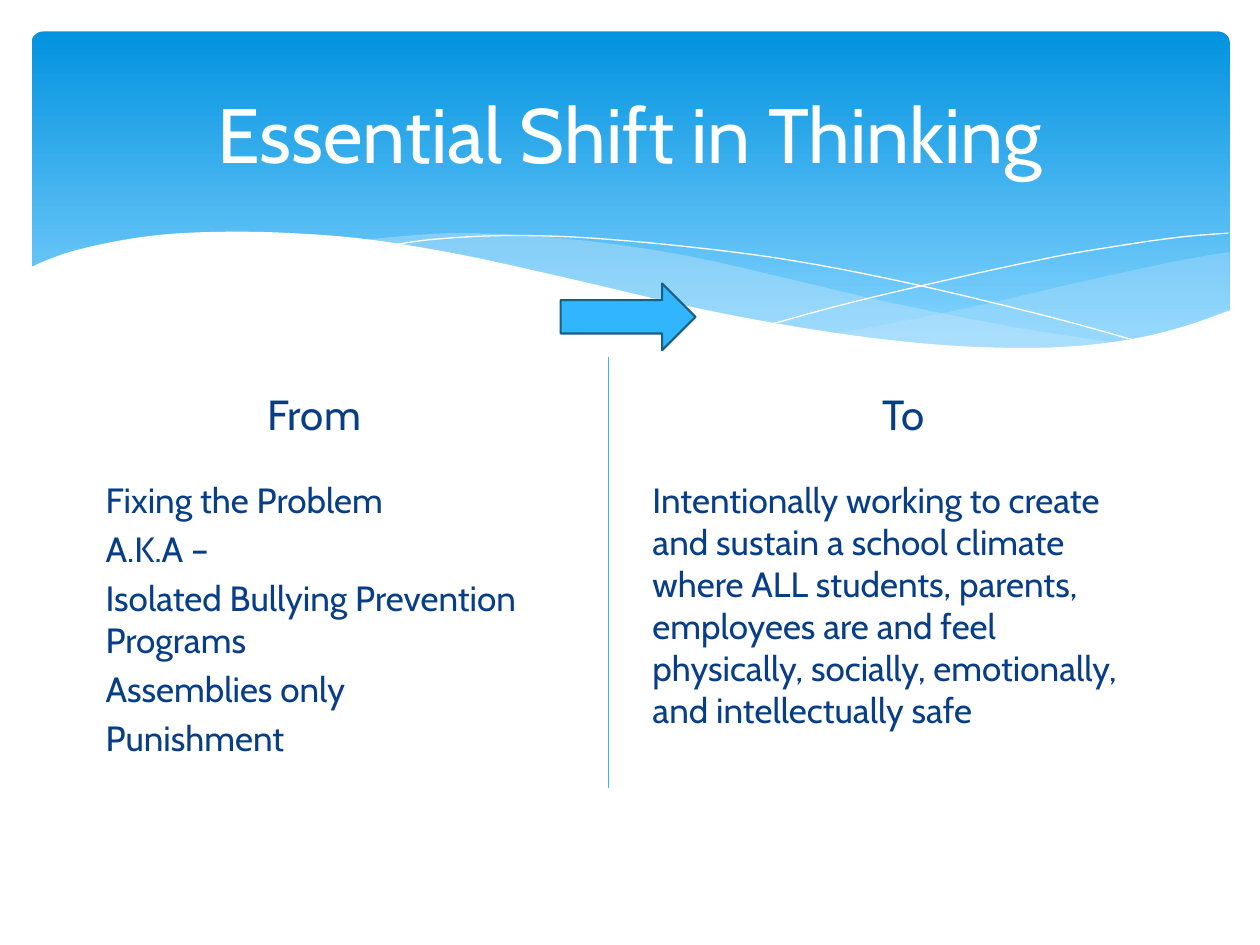
from lxml import etree
from pptx import Presentation
from pptx.dml.color import RGBColor
from pptx.enum.shapes import MSO_CONNECTOR, MSO_SHAPE
from pptx.enum.text import MSO_ANCHOR, PP_ALIGN
from pptx.oxml.ns import qn
from pptx.util import Inches, Pt

LEFT, CENTER = PP_ALIGN.LEFT, PP_ALIGN.CENTER
TOP, MIDDLE = MSO_ANCHOR.TOP, MSO_ANCHOR.MIDDLE
ROUNDED, ARROW = MSO_SHAPE.ROUNDED_RECTANGLE, MSO_SHAPE.RIGHT_ARROW
STRAIGHT = MSO_CONNECTOR.STRAIGHT

FONT = "Cabin"
COLORS = {
    "sky_top": "0293E0", "sky_bottom": "83D3FE", "wave": "C6E7FC",
    "white": "FFFFFF", "text": "073E87", "accent": "31B6FD", "outline": "195F84",
}

# Grid: two columns, a heading row and a body row (inches)
COLUMN_LEFT = (0.74, 5.08)
COLUMN_WIDTH = 4.18
HEADING_TOP, HEADING_HEIGHT = 2.93, 0.7
BODY_TOP, BODY_HEIGHT = 3.75, 2.95

# Each column: heading, heading width, body paragraphs
COLUMNS = [
    ("From", 3.51, ["Fixing the Problem", "A.K.A –",
                    "Isolated Bullying Prevention Programs",
                    "Assemblies only", "Punishment"]),
    ("To", COLUMN_WIDTH, [
        "Intentionally working to create and sustain a school climate where ALL "
        "students, parents, employees are and feel physically, socially, "
        "emotionally, and intellectually safe"]),
]

# Waves: opacity in percent and the smooth edges that enclose each one
WAVES = [
    (29, [[(9.76, 2), (9.35, 2.07), (8.61, 2.23), (7.79, 2.42), (7.06, 2.57), (6.61, 2.65)],
          [(6.61, 2.65), (7.19, 2.72), (7.69, 2.77), (8.14, 2.78), (8.63, 2.75),
           (9.13, 2.67), (9.49, 2.57), (9.76, 2.47)]]),
    (40, [[(8.93, 2.73), (8.07, 2.6), (7.06, 2.4), (6.29, 2.22), (5.55, 2.05),
           (4.89, 1.94), (4.2, 1.87), (3.61, 1.85), (3.13, 1.88), (2.86, 1.91)],
          [(2.86, 1.91), (3.42, 1.99), (4.04, 2.11), (4.91, 2.32), (5.66, 2.48),
           (6.34, 2.61), (6.95, 2.7), (7.48, 2.76), (8.07, 2.78), (8.57, 2.77), (8.93, 2.73)]]),
    (100, [[(9.77, 2.46), (9.4, 2.59), (8.99, 2.69), (8.5, 2.75), (7.93, 2.76),
            (7.26, 2.72), (6.48, 2.62), (5.55, 2.45), (4.47, 2.2), (3.65, 2.02),
            (2.92, 1.9), (2.3, 1.85), (1.77, 1.84), (1.32, 1.86), (0.95, 1.91),
            (0.59, 1.99), (0.36, 2.07), (0.23, 2.13)],
           [(0.23, 3.29), (9.77, 3.29)]]),
]
CRESTS = [
    [(3.09, 1.95), (3.44, 1.9), (4.01, 1.87), (4.69, 1.89), (5.56, 1.97),
     (6.36, 2.08), (7.27, 2.26), (8.31, 2.51), (9.07, 2.72)],
    [(6.13, 2.57), (6.72, 2.41), (7.48, 2.23), (8.36, 2.04), (8.95, 1.94),
     (9.38, 1.88), (9.75, 1.85)],
]


def color(name):
    return RGBColor.from_string(COLORS[name])


def smooth(knots, steps=6):
    """Return points on a Catmull-Rom curve through the knots."""
    padded = [knots[0], *knots, knots[-1]]
    points = [knots[0]]
    for a, b, c, d in zip(padded, padded[1:], padded[2:], padded[3:]):
        for step in range(1, steps + 1):
            t = step / steps
            points.append(tuple(
                (2 * q + (r - p) * t + (2 * p - 5 * q + 4 * r - s) * t ** 2
                 + (3 * q - p - 3 * r + s) * t ** 3) / 2
                for p, q, r, s in zip(a, b, c, d)))
    return points


def add_outline(slide, points, close):
    # The builder rounds to whole units, so points are given in EMU
    start, *others = [(Inches(x), Inches(y)) for x, y in points]
    builder = slide.shapes.build_freeform(*start)
    builder.add_line_segments(others, close=close)
    outline = builder.convert_to_shape()
    outline.shadow.inherit = False
    return outline


def add_wave(slide, opacity, edges):
    wave = add_outline(slide, [point for edge in edges for point in smooth(edge)], True)
    wave.fill.solid()
    wave.fill.fore_color.rgb = color("white" if opacity == 100 else "wave")
    wave.line.fill.background()
    if opacity < 100:
        tint = wave._element.spPr.find(qn("a:solidFill"))[0]
        etree.SubElement(tint, qn("a:alpha"), val=str(opacity * 1000))


def add_crest(slide, knots):
    crest = add_outline(slide, smooth(knots), False)
    crest.fill.background()
    crest.line.color.rgb = color("white")
    crest.line.width = Pt(0)


def add_banner(slide):
    banner = slide.shapes.add_shape(
        ROUNDED, Inches(0.25), Inches(0.25), Inches(9.51), Inches(2.7))
    banner.adjustments[0] = 0.034
    banner.shadow.inherit = False
    banner.line.fill.background()
    banner.fill.gradient()
    banner.fill.gradient_angle = 270
    stops = zip(banner.fill.gradient_stops, ("sky_top", "sky_bottom"), (0, 0.9))
    for stop, name, position in stops:
        stop.color.rgb = color(name)
        stop.position = position


def write_text(frame, lines, size, color_name, align, anchor, gap=0):
    frame.word_wrap = True
    frame.vertical_anchor = anchor
    for index, line in enumerate(lines):
        paragraph = frame.add_paragraph() if index else frame.paragraphs[0]
        paragraph.text = line
        paragraph.alignment = align
        paragraph.space_before = Pt(gap)
        paragraph.font.size = Pt(size)
        paragraph.font.name = FONT
        paragraph.font.color.rgb = color(color_name)


def place_title(slide):
    title = slide.shapes.title
    title.left, title.top = Inches(0.5), Inches(0.37)
    title.width, title.height = Inches(9), Inches(1.37)
    write_text(title.text_frame, ["Essential Shift in Thinking"], 44, "white", CENTER, MIDDLE)
    slide.shapes._spTree.append(title._element)  # in front of the banner


def add_column(slide, left, heading, heading_width, lines):
    heading_box = slide.shapes.add_textbox(
        Inches(left), Inches(HEADING_TOP), Inches(heading_width), Inches(HEADING_HEIGHT))
    write_text(heading_box.text_frame, [heading], 24, "text", CENTER, MIDDLE, 4.8)
    body_box = slide.shapes.add_textbox(
        Inches(left), Inches(BODY_TOP), Inches(COLUMN_WIDTH), Inches(BODY_HEIGHT))
    write_text(body_box.text_frame, lines, 20, "text", LEFT, TOP, 4)


def add_shift_arrow(slide):
    arrow = slide.shapes.add_shape(
        ARROW, Inches(4.45), Inches(2.25), Inches(1.07), Inches(0.53))
    arrow.shadow.inherit = False
    arrow.fill.solid()
    arrow.fill.fore_color.rgb = color("accent")
    arrow.line.color.rgb = color("outline")
    arrow.line.width = Pt(1.25)


def add_divider(slide):
    divider = slide.shapes.add_connector(
        STRAIGHT, Inches(4.83), Inches(2.83), Inches(4.83), Inches(6.25))
    divider.line.color.rgb = color("accent")
    divider.line.width = Pt(0.75)
    etree.SubElement(divider._element.spPr, qn("a:effectLst"))


def main():
    deck = Presentation()
    deck.slide_width, deck.slide_height = Inches(10), Inches(7.5)
    slide = deck.slides.add_slide(deck.slide_layouts[5])

    # Banner with translucent waves, thin crests and the white cut-out
    add_banner(slide)
    *translucent, cutout = WAVES
    for wave in translucent:
        add_wave(slide, *wave)
    for crest in CRESTS:
        add_crest(slide, crest)
    add_wave(slide, *cutout)

    # Title and the two columns
    place_title(slide)
    for left, column in zip(COLUMN_LEFT, COLUMNS):
        add_column(slide, left, *column)

    # Arrow and line between the columns
    add_shift_arrow(slide)
    add_divider(slide)
    deck.save("out.pptx")


if __name__ == "__main__":
    main()
